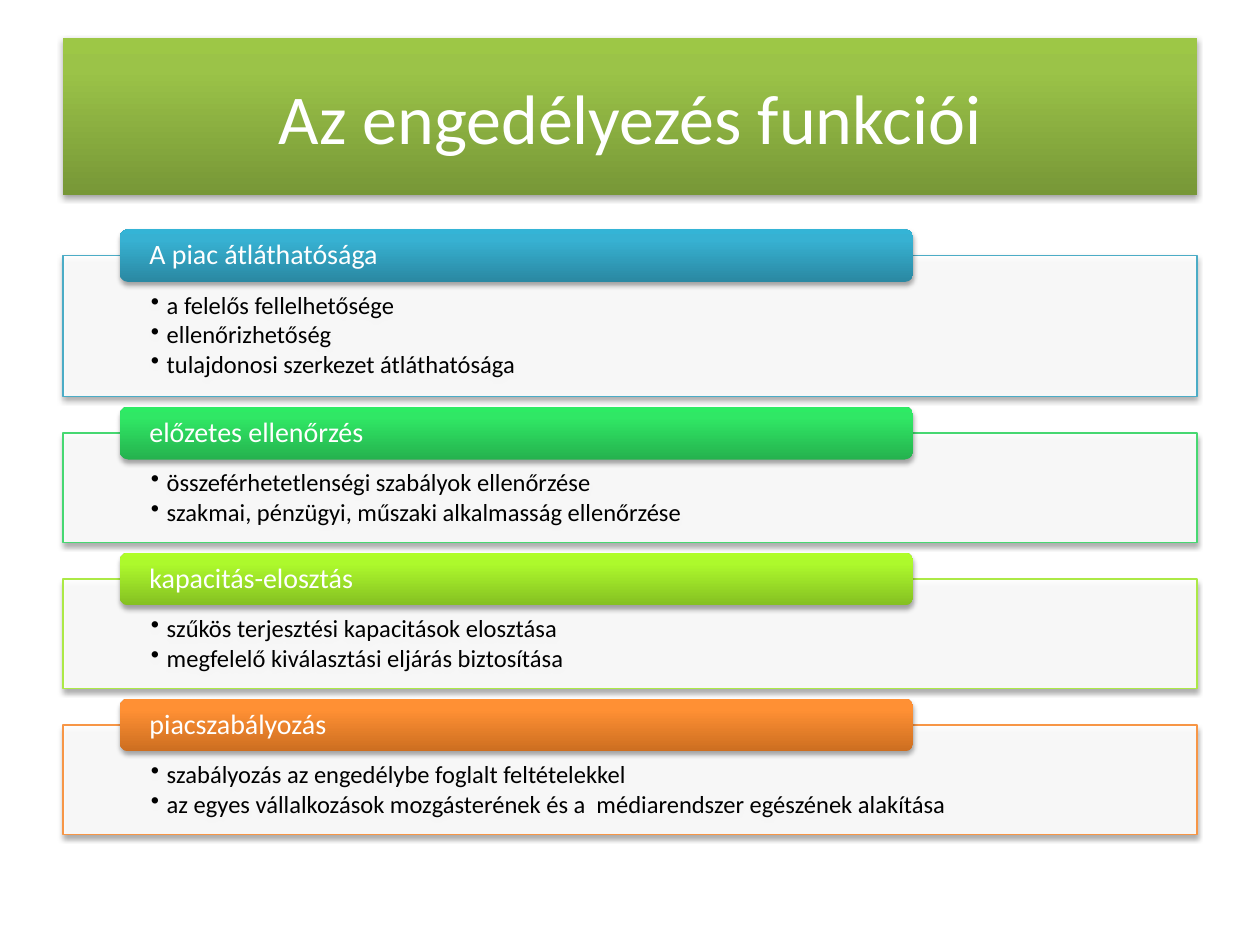
import copy
import pptx
import pptx.util
import pptx.oxml
import pptx.dml.color
import pptx.enum.shapes
import pptx.enum.text

Pt = pptx.util.Pt
RGB = pptx.dml.color.RGBColor.from_string
Kind = pptx.enum.shapes.MSO_SHAPE
Align = pptx.enum.text.PP_ALIGN
Anchor = pptx.enum.text.MSO_ANCHOR
NS = 'xmlns:a="http://schemas.openxmlformats.org/drawingml/2006/main"'

hues = {
    "white": "FFFFFF",
    "black": "000000",
    "title": ("779737", "9BC348", "9DC746"),
    "blue": ("2A88A2", "37B1D2", "34B4D6"),
    "green": ("25B24E", "30E765", "2DEB64"),
    "lime": ("85C022", "ADF92C", "AFFE28"),
    "orange": ("CC6E20", "FF9034", "FF9136"),
}
edges = {"blue": "4BACC6", "green": "47D872", "lime": "ACE946", "orange": "F79646"}

parts = [
    ("blue", "A piac átláthatósága",
     ["a felelős fellelhetősége", "ellenőrizhetőség",
      "tulajdonosi szerkezet átláthatósága"]),
    ("green", "előzetes ellenőrzés",
     ["összeférhetetlenségi szabályok ellenőrzése",
      "szakmai, pénzügyi, műszaki alkalmasság ellenőrzése"]),
    ("lime", "kapacitás-elosztás",
     ["szűkös terjesztési kapacitások elosztása",
      "megfelelő kiválasztási eljárás biztosítása"]),
    ("orange", "piacszabályozás",
     ["szabályozás az engedélybe foglalt feltételekkel",
      "az egyes vállalkozások mozgásterének és a  médiarendszer egészének alakítása"]),
]

deck = pptx.Presentation()
deck.slide_width, deck.slide_height = Pt(720), Pt(540)
slide = deck.slides.add_slide(deck.slide_layouts[6])


def add_box(kind, box, stops=None):
    """Add a shape with a soft drop shadow and, given stops, a gradient."""
    shape = slide.shapes.add_shape(kind, *[Pt(n) for n in box])
    if stops:
        shape.line.fill.background()
        shape.fill.gradient()
        shape.fill.gradient_angle = 90
        rows = shape.fill.gradient_stops
        last = rows[1]._gs
        last.addprevious(copy.deepcopy(last))
        for stop, place, hue in zip(shape.fill.gradient_stops, (0, 0.8, 1), stops):
            stop.position = place
            stop.color.rgb = RGB(hue)
            for tweak in list(stop._gs[0]):
                stop._gs[0].remove(tweak)
    else:
        shape.fill.solid()
        shape.fill.fore_color.rgb = RGB(hues["white"])
    shape.shadow.inherit = False
    glow = shape._element.spPr.find(pptx.oxml.ns.qn("a:effectLst"))
    glow.append(pptx.oxml.parse_xml(
        f'<a:outerShdw {NS} blurRad="{Pt(3.1)}" dist="{Pt(1.8)}" dir="5400000" rotWithShape="0">'
        '<a:srgbClr val="000000"><a:alpha val="35000"/></a:srgbClr></a:outerShdw>'))
    return shape


def set_text(shape, lines, size, hue, align, anchor, pads):
    frame = shape.text_frame
    frame.text = "\n".join(lines)
    frame.word_wrap = True
    frame.vertical_anchor = anchor
    (frame.margin_left, frame.margin_top,
     frame.margin_right, frame.margin_bottom) = [Pt(n) for n in pads]
    for para in frame.paragraphs:
        para.alignment = align
        font = para.runs[0].font
        font.name, font.size = "Calibri", Pt(size)
        font.color.rgb = RGB(hue)
    return frame.paragraphs


title = add_box(Kind.RECTANGLE, (36, 21.6, 648, 90), hues["title"])
set_text(title, ["Az engedélyezés funkciói"], 40, hues["white"],
         Align.CENTER, Anchor.MIDDLE, (7.2, 3.6, 7.2, 3.6))

top, gap, tab_high = 146.1, 20.8, 30.2
for name, head, items in parts:
    high = 26.6 + 18 * len(items)
    panel = add_box(Kind.RECTANGLE, (36, top, 648, high))
    tint = panel._element.spPr.find(".//" + pptx.oxml.ns.qn("a:srgbClr"))
    tint.append(pptx.oxml.parse_xml(f'<a:alpha {NS} val="90000"/>'))
    panel.line.color.rgb = RGB(edges[name])
    panel.line.width = Pt(0.75)
    for para in set_text(panel, items, 14, hues["black"], Align.LEFT,
                         Anchor.TOP, (50.3, 21.3, 50.3, 8)):
        para.line_spacing = 0.9
        para.space_after = Pt(1.8)
        props = para._p.get_or_add_pPr()
        props.set("marL", str(Pt(9)))
        props.set("indent", str(-Pt(9)))
        props.append(pptx.oxml.parse_xml(f'<a:buChar {NS} char="•"/>'))

    tab = add_box(Kind.ROUNDED_RECTANGLE,
                  (68.4, top - tab_high / 2, 453.6, tab_high), hues[name])
    for para in set_text(tab, [head], 16, hues["white"], Align.LEFT,
                         Anchor.MIDDLE, (15.6, 0, 15.6, 0)):
        para.line_spacing = 0.9
    top += high + gap

deck.save("out.pptx")
